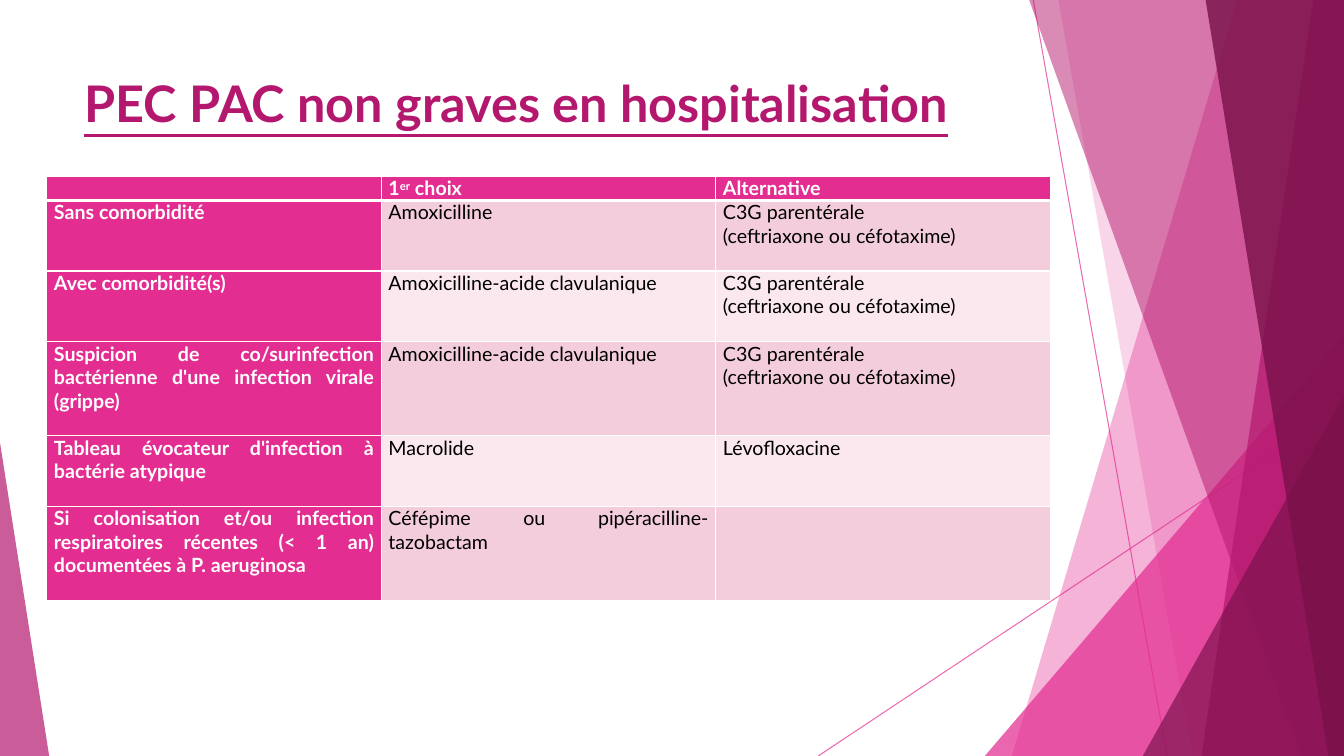
from lxml import etree
from pptx import Presentation, util as u
from pptx.dml.color import RGBColor
from pptx.enum import shapes, text
from pptx.oxml import ns

Cm, Pt = u.Cm, u.Pt

# Colours
WHITE = RGBColor(0xFF, 0xFF, 0xFF)
BLACK = RGBColor(0x00, 0x00, 0x00)
PINK = RGBColor(0xE3, 0x2D, 0x91)
MAGENTA = RGBColor(0xB4, 0x18, 0x6E)
PLUM = RGBColor(0x78, 0x10, 0x49)
ROSE = RGBColor(0xF4, 0xCD, 0xDC)
PALE_ROSE = RGBColor(0xFA, 0xE8, 0xEE)

# Content: each cell is a list of paragraphs, each paragraph a list of runs
FONT = "Lato"
SUPERSCRIPT = "er"
TITLE = "PEC PAC non graves en hospitalisation"
C3G = [["C3G parentérale"], ["(ceftriaxone ou céfotaxime)"]]
CLAVULANIQUE = [["Amoxicilline-acide clavulanique"]]
TREATMENTS = [
    ([], [["1", SUPERSCRIPT, " choix"]], [["Alternative"]]),
    ([["Sans comorbidité"]], [["Amoxicilline"]], C3G),
    ([["Avec comorbidité(s)"]], CLAVULANIQUE, C3G),
    ([["Suspicion de co/surinfection bactérienne d'une infection virale (grippe)"]],
     CLAVULANIQUE, C3G),
    ([["Tableau évocateur d'infection à bactérie atypique"]],
     [["Macrolide"]], [["Lévofloxacine"]]),
    ([["Si colonisation et/ou infection respiratoires récentes (< 1 an) "
       "documentées à P. aeruginosa"]],
     [["Céfépime ou pipéracilline-tazobactam"]], []),
]
ROW_HEIGHTS = [0.6, 1.78, 1.78, 2.37, 1.78, 2.37]
COLUMN_WIDTH = 8.43

# Decoration, back to front, in cm
SLIDE_W, SLIDE_H = 33.87, 19.05
BAND_TOP = -0.02
RAYS = [((26.04, 0), (29.41, SLIDE_H)), ((SLIDE_W, 10.24), (20.62, SLIDE_H))]
# band: left edge at top, left edge at bottom; peak: left, top, width, apex
FACETS = [
    ("band", (31.19, 25.5), PINK, 36),
    ("band", (26.67, 30.05), PINK, 20),
    ("peak", (24.82, 8.46, 9.05, 1), PINK, 72),
    ("band", (25.93, 32.79), MAGENTA, 50),
    ("band", (33.1, 30.28), MAGENTA, 70),
    ("band", (30.38, 33.48), PLUM, 80),
    ("peak", (28.8, 9.98, 5.07, 1), PLUM, 66),
    ("peak", (0, 11.15, 1.24, 0), MAGENTA, 70),
]


def add_xml(parent, tag, **attributes):
    return etree.SubElement(parent, ns.qn(tag), attributes)


def set_opacity(shape, percent):
    for color in shape._element.spPr.iter(ns.qn("a:srgbClr")):
        add_xml(color, "a:alpha", val=str(percent * 1000))


def add_ray(slide, start, end):
    ray = slide.shapes.add_connector(
        shapes.MSO_CONNECTOR.STRAIGHT, *(Cm(v) for v in start + end))
    ray.line.color.rgb = PINK
    ray.line.width = Pt(0.75)
    set_opacity(ray, 70)
    add_xml(ray._element.spPr, "a:effectLst")


def add_facet(slide, kind, geometry, color, opacity):
    if kind == "band":
        top_x, bottom_x = geometry
        outline = slide.shapes.build_freeform(Cm(top_x), Cm(BAND_TOP))
        corners = [(SLIDE_W, BAND_TOP), (SLIDE_W, SLIDE_H), (bottom_x, SLIDE_H)]
        outline.add_line_segments([(Cm(x), Cm(y)) for x, y in corners])
        facet = outline.convert_to_shape()
    else:
        left, top, width, apex = geometry
        facet = slide.shapes.add_shape(
            shapes.MSO_SHAPE.ISOSCELES_TRIANGLE,
            Cm(left), Cm(top), Cm(width), Cm(SLIDE_H - top))
        facet.adjustments[0] = apex
    facet.shadow.inherit = False
    facet.fill.solid()
    facet.fill.fore_color.rgb = color
    facet.line.fill.background()
    set_opacity(facet, opacity)


def add_run(paragraph, words, size, color, bold):
    run = paragraph.add_run()
    run.text = words
    run.font.name = FONT
    run.font.size = Pt(size)
    run.font.bold = bold
    run.font.color.rgb = color
    return run


def add_border(cell, side, points):
    border = add_xml(cell._tc.get_or_add_tcPr(), "a:ln" + side, w=str(Pt(points)))
    add_xml(add_xml(border, "a:solidFill"), "a:srgbClr", val=str(WHITE))


def fill_cell(cell, paragraphs, row, column):
    heading = row == 0 or column == 0
    for side in "LRTB":
        under_header = (row, side) in ((0, "B"), (1, "T"))
        add_border(cell, side, 3 if under_header else 1)
    cell.fill.solid()
    cell.fill.fore_color.rgb = PINK if heading else (ROSE if row % 2 else PALE_ROSE)
    cell.margin_left = cell.margin_right = Cm(0.18)
    cell.margin_top = cell.margin_bottom = 0
    frame = cell.text_frame
    for index, runs in enumerate(paragraphs):
        paragraph = frame.add_paragraph() if index else frame.paragraphs[0]
        paragraph.alignment = text.PP_ALIGN.JUSTIFY
        for words in runs:
            run = add_run(paragraph, words, 14, WHITE if heading else BLACK, heading)
            if words == SUPERSCRIPT:
                run._r.get_or_add_rPr().set("baseline", "30000")
    if not paragraphs:
        # An empty cell must not stretch its row
        add_xml(frame.paragraphs[0]._p, "a:endParaRPr", sz="1400")


def main():
    deck = Presentation()
    deck.slide_width, deck.slide_height = Cm(SLIDE_W), Cm(SLIDE_H)
    slide = deck.slides.add_slide(deck.slide_layouts[6])

    # Background decoration
    for start, end in RAYS:
        add_ray(slide, start, end)
    for facet in FACETS:
        add_facet(slide, *facet)

    # Title
    title = slide.shapes.add_textbox(Cm(1.88), Cm(1.7), Cm(23.88), Cm(3.66)).text_frame
    title.word_wrap = True
    title.vertical_anchor = text.MSO_ANCHOR.TOP
    add_run(title.paragraphs[0], TITLE, 36, MAGENTA, True).font.underline = True

    # Treatment table
    columns = len(TREATMENTS[0])
    treatments = slide.shapes.add_table(
        len(TREATMENTS), columns, Cm(1.18), Cm(4.45),
        Cm(COLUMN_WIDTH * columns), Cm(sum(ROW_HEIGHTS))).table
    for column in treatments.columns:
        column.width = Cm(COLUMN_WIDTH)
    for row, (height, cells) in enumerate(zip(ROW_HEIGHTS, TREATMENTS)):
        treatments.rows[row].height = Cm(height)
        for column, paragraphs in enumerate(cells):
            fill_cell(treatments.cell(row, column), paragraphs, row, column)

    deck.save("out.pptx")


if __name__ == "__main__":
    main()
